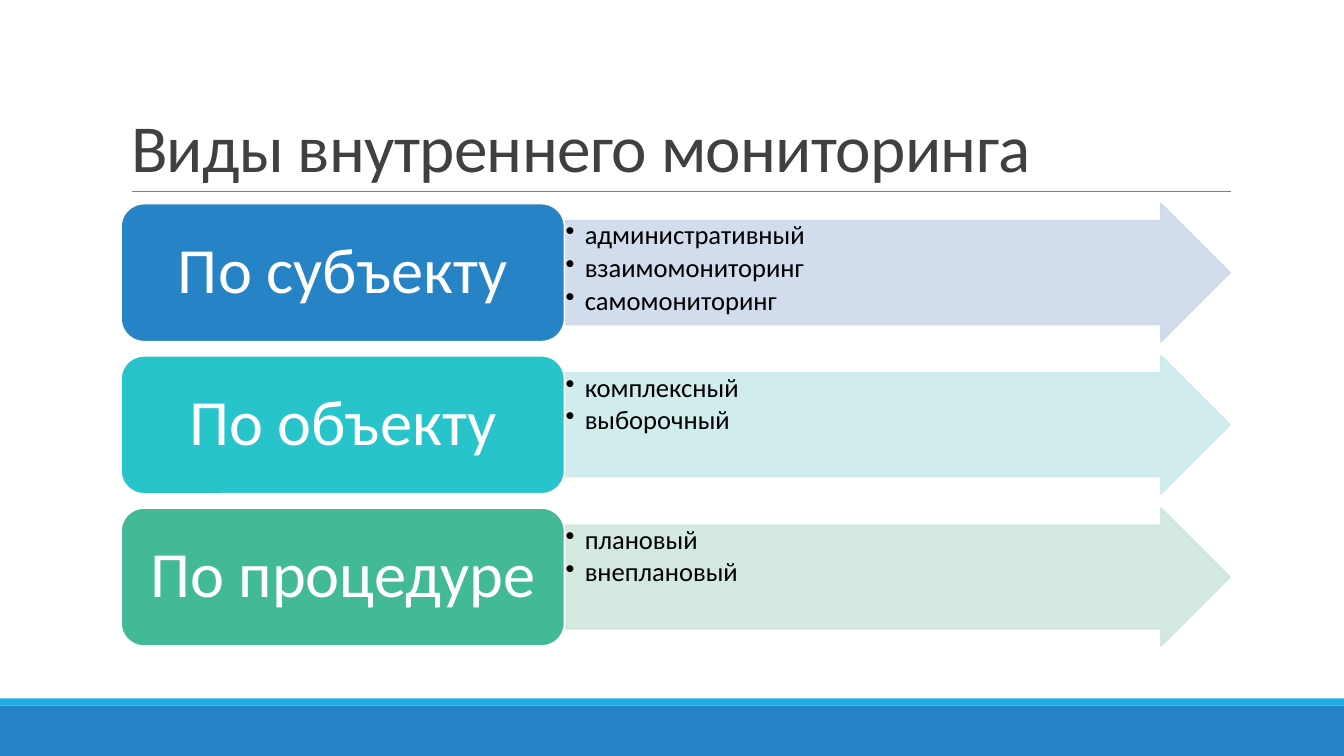
from dataclasses import dataclass

from lxml.etree import SubElement
from pptx import Presentation
from pptx.dml.color import RGBColor
from pptx.dml.fill import FillFormat
from pptx.enum.shapes import MSO_CONNECTOR, MSO_SHAPE
from pptx.enum.text import MSO_ANCHOR, MSO_AUTO_SIZE, PP_ALIGN
from pptx.oxml.ns import qn
from pptx.shapes.autoshape import Shape
from pptx.slide import Slide
from pptx.text.text import TextFrame, _Paragraph
from pptx.util import Inches, Pt

FONT = "Calibri"
ROW_TOP, ROW_STEP, ROW_HEIGHT = 2.02, 1.51, 1.37
LABEL_LEFT, LABEL_WIDTH, ARROW_WIDTH = 1.2, 4.4, 6.6
BULLET_INDENT = 0.19


@dataclass(frozen=True)
class MonitoringKind:
    basis: str
    types: tuple[str, ...]
    label_color: str
    arrow_color: str


@dataclass(frozen=True)
class Band:
    top: float
    height: float
    color: str


KINDS = (
    MonitoringKind("По субъекту", ("административный", "взаимомониторинг", "самомониторинг"),
                   "2683C6", "CDD9EA"),
    MonitoringKind("По объекту", ("комплексный", "выборочный"), "28C4CC", "CDEAEC"),
    MonitoringKind("По процедуре", ("плановый", "внеплановый"), "42BA97", "CFE7DD"),
)
FOOTER_BANDS = (Band(7, 0.5, "2683C6"), Band(6.93, 0.07, "1CADE4"))


def paint(fill: FillFormat, color: str) -> None:
    fill.solid()
    fill.fore_color.rgb = RGBColor.from_string(color)


def apply_format(target: object, values: dict[str, object]) -> None:
    for attribute, value in values.items():
        setattr(target, attribute, value)


def set_frame(frame: TextFrame, anchor: MSO_ANCHOR, side: float, edge: float) -> None:
    apply_format(frame, {
        "word_wrap": True, "auto_size": MSO_AUTO_SIZE.NONE, "vertical_anchor": anchor,
        "margin_left": Inches(side), "margin_right": Inches(side),
        "margin_top": Inches(edge), "margin_bottom": Inches(edge),
    })


def write(paragraph: _Paragraph, text: str, size: float, color: str,
          align: PP_ALIGN = PP_ALIGN.LEFT, spacing: float = 0.9, after: float = 0) -> None:
    apply_format(paragraph, {"text": text, "alignment": align, "line_spacing": spacing,
                             "space_before": Pt(0), "space_after": Pt(after)})
    apply_format(paragraph.font, {"name": FONT, "size": Pt(size)})
    paint(paragraph.font.fill, color)


def add_bullet(paragraph: _Paragraph) -> None:
    paragraph.level = 1
    properties = paragraph._p.get_or_add_pPr()
    properties.set("marL", str(Inches(BULLET_INDENT)))
    properties.set("indent", str(-Inches(BULLET_INDENT)))
    SubElement(properties, qn("a:buChar"), char="•")


def add_block(slide: Slide, kind: MSO_SHAPE, left: float, top: float, width: float,
              height: float, color: str, outline: str | None = None) -> Shape:
    block = slide.shapes.add_shape(kind, Inches(left), Inches(top), Inches(width), Inches(height))
    block.shadow.inherit = False
    paint(block.fill, color)
    if outline:
        paint(block.line.fill, outline)
        block.line.width = Pt(1.25)
    else:
        block.line.fill.background()
    return block


def add_types_arrow(slide: Slide, kind: MonitoringKind, top: float) -> None:
    arrow = add_block(slide, MSO_SHAPE.RIGHT_ARROW, LABEL_LEFT + LABEL_WIDTH, top,
                      ARROW_WIDTH, ROW_HEIGHT, kind.arrow_color, kind.arrow_color)
    arrow.adjustments[0], arrow.adjustments[1] = 0.75, 0.5
    for color in arrow._element.spPr.iter(qn("a:srgbClr")):
        SubElement(color, qn("a:alpha"), val="90000")
    frame = arrow.text_frame
    set_frame(frame, MSO_ANCHOR.TOP, 0.01, 0.01)
    for index, name in enumerate(kind.types):
        paragraph = frame.add_paragraph() if index else frame.paragraphs[0]
        write(paragraph, name, 19, "000000", after=2.85)
        add_bullet(paragraph)


def add_basis_label(slide: Slide, kind: MonitoringKind, top: float) -> None:
    label = add_block(slide, MSO_SHAPE.ROUNDED_RECTANGLE, LABEL_LEFT, top,
                      LABEL_WIDTH, ROW_HEIGHT, kind.label_color, "FFFFFF")
    set_frame(label.text_frame, MSO_ANCHOR.MIDDLE, 0.19, 0.1)
    write(label.text_frame.paragraphs[0], kind.basis, 46, "FFFFFF", PP_ALIGN.CENTER)


def add_title(slide: Slide, text: str) -> None:
    title = slide.shapes.title
    apply_format(title, {"left": Inches(1.2), "top": Inches(0.31),
                         "width": Inches(11), "height": Inches(1.59)})
    set_frame(title.text_frame, MSO_ANCHOR.BOTTOM, 0.1, 0.05)
    heading = title.text_frame.paragraphs[0]
    write(heading, text, 48, "404040", spacing=0.85)
    heading.runs[0].font._element.set("spc", "-50")


def add_title_rule(slide: Slide) -> None:
    rule = slide.shapes.add_connector(MSO_CONNECTOR.STRAIGHT, Inches(1.31), Inches(1.9),
                                      Inches(12.21), Inches(1.9))
    paint(rule.line.fill, "808080")
    rule.line.width = Pt(0.5)
    SubElement(rule._element.spPr, qn("a:effectLst"))


def main() -> None:
    presentation = Presentation()
    presentation.slide_width, presentation.slide_height = Inches(13.33), Inches(7.5)
    slide = presentation.slides.add_slide(presentation.slide_layouts[5])

    # Footer bands
    for band in FOOTER_BANDS:
        add_block(slide, MSO_SHAPE.RECTANGLE, 0, band.top, 13.33, band.height, band.color)

    # Heading
    add_title_rule(slide)
    add_title(slide, "Виды внутреннего мониторинга")

    # Monitoring kinds, one row each
    for row, kind in enumerate(KINDS):
        top = ROW_TOP + row * ROW_STEP
        add_types_arrow(slide, kind, top)
        add_basis_label(slide, kind, top)

    presentation.save("out.pptx")


if __name__ == "__main__":
    main()
